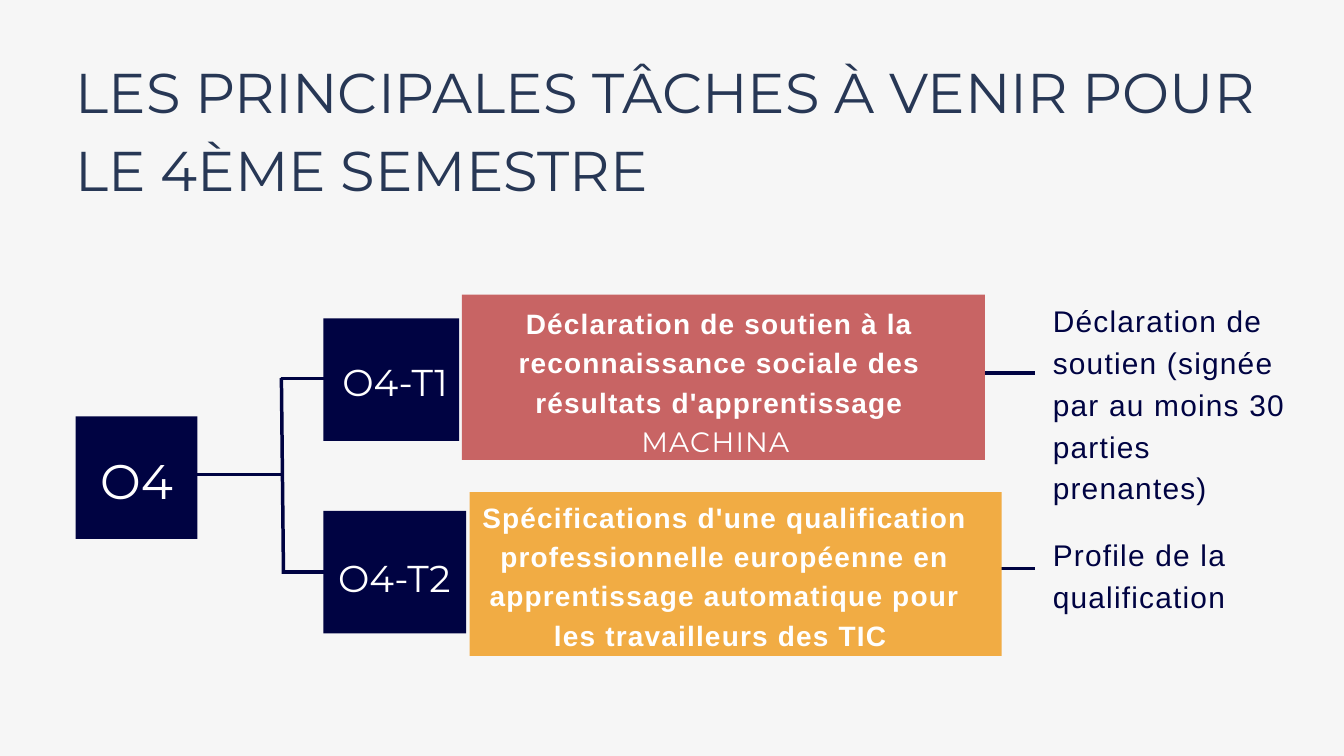
from lxml import etree
from pptx import Presentation
from pptx.dml.color import RGBColor
from pptx.enum.shapes import MSO_CONNECTOR, MSO_SHAPE
from pptx.enum.text import MSO_ANCHOR, MSO_AUTO_SIZE, PP_ALIGN
from pptx.oxml.ns import qn
from pptx.util import Emu, Pt

EMU_PER_PX = 9525
NAVY, RED, AMBER = "000342", "C86464", "F1AC44"
SLATE, WHITE, PAPER = "273755", "FFFFFF", "F6F6F6"
HEADING_FONT, BODY_FONT = "Montserrat", "Arial"
LINE_FACTOR = 1.4


def px(length):
    return Emu(length * EMU_PER_PX)


def paint(fill, colour):
    fill.solid()
    fill.fore_color.rgb = RGBColor.from_string(colour)


def format_run(run, size, font, colour, bold=False, spacing=0):
    """Format one run; spacing is in hundredths of a point."""
    run.font.size = Pt(size)
    run.font.name = font
    run.font.bold = bold
    run.font.color.rgb = RGBColor.from_string(colour)
    if spacing:
        run.font._element.set("spc", str(spacing))


def set_text(shape, text, size, font, colour, align=PP_ALIGN.LEFT, **style):
    frame = shape.text_frame
    frame.word_wrap = True
    frame.auto_size = MSO_AUTO_SIZE.NONE
    frame.vertical_anchor = MSO_ANCHOR.TOP
    frame.margin_left = frame.margin_top = 0
    frame.margin_right = frame.margin_bottom = 0
    frame.text = text
    paragraph = frame.paragraphs[0]
    paragraph.alignment = align
    paragraph.line_spacing = Pt(round(size * LINE_FACTOR, 1))
    format_run(paragraph.runs[0], size, font, colour, **style)
    return paragraph


def add_title(slide, box, text):
    title = slide.shapes.title
    title.left, title.top, title.width, title.height = map(px, box)
    set_text(title, text, 60, HEADING_FONT, SLATE)


def add_label(slide, box, text, size, font, colour, **style):
    label = slide.shapes.add_textbox(*map(px, box))
    return set_text(label, text, size, font, colour, **style)


def add_block(slide, box, colour):
    block = slide.shapes.add_shape(MSO_SHAPE.RECTANGLE, *map(px, box))
    block.shadow.inherit = False
    paint(block.fill, colour)
    block.line.fill.background()


def add_branch(slide, ends):
    branch = slide.shapes.add_connector(MSO_CONNECTOR.STRAIGHT, *map(px, ends))
    branch.line.width = Pt(3.75)
    branch.line.color.rgb = RGBColor.from_string(NAVY)
    etree.SubElement(branch._element.spPr, qn("a:effectLst"))


def add_code(slide, block, label, text, size):
    """Navy block with a task code such as O4-T1."""
    add_block(slide, block, NAVY)
    add_label(slide, label, text, size, HEADING_FONT, WHITE,
              align=PP_ALIGN.CENTER)


def add_task(slide, block, label, text, colour):
    add_block(slide, block, colour)
    return add_label(slide, label, text, 30, BODY_FONT, WHITE,
                     align=PP_ALIGN.CENTER, bold=True, spacing=130)


def add_outcome(slide, box, text):
    add_label(slide, box, text, 32, BODY_FONT, NAVY, spacing=130)


def main():
    deck = Presentation()
    deck.slide_width, deck.slide_height = px(1920), px(1080)
    slide = deck.slides.add_slide(deck.slide_layouts.get_by_name("Title Only"))
    paint(slide.background.fill, PAPER)

    add_title(slide, (108, 66, 1704, 227),
              "LES PRINCIPALES TÂCHES À VENIR POUR LE 4ÈME SEMESTRE")

    for ends in (
        (402, 540, 405, 820),
        (282, 678, 402, 678),
        (402, 541, 518, 541),
        (405, 817, 514, 817),
        (1363, 533, 1479, 533),
        (1363, 812, 1479, 812),
    ):
        add_branch(slide, ends)

    add_code(slide, (108, 595, 174, 175), (142, 630, 106, 92), "O4", 52)
    add_code(slide, (462, 455, 194, 175), (487, 503, 155, 71), "O4-T1", 40)
    add_code(slide, (462, 730, 204, 175), (481, 782, 165, 71), "O4-T2", 40)

    declaration = add_task(
        slide, (660, 421, 747, 236), (680, 430, 696, 220),
        "Déclaration de soutien à la reconnaissance sociale des résultats "
        "d'apprentissage ", RED)
    partner = declaration.add_run()
    partner.text = "MACHINA "
    format_run(partner, 30, HEADING_FONT, WHITE, spacing=130)
    add_task(
        slide, (671, 703, 760, 234), (664, 707, 743, 222),
        "Spécifications d'une qualification professionnelle européenne en "
        "apprentissage automatique pour les travailleurs des TIC ", AMBER)

    add_outcome(slide, (1504, 424, 344, 303),
                "Déclaration de soutien (signée par au moins 30 parties "
                "prenantes)")
    add_outcome(slide, (1504, 758, 384, 116), "Profile de la qualification")

    deck.save("out.pptx")


if __name__ == "__main__":
    main()
